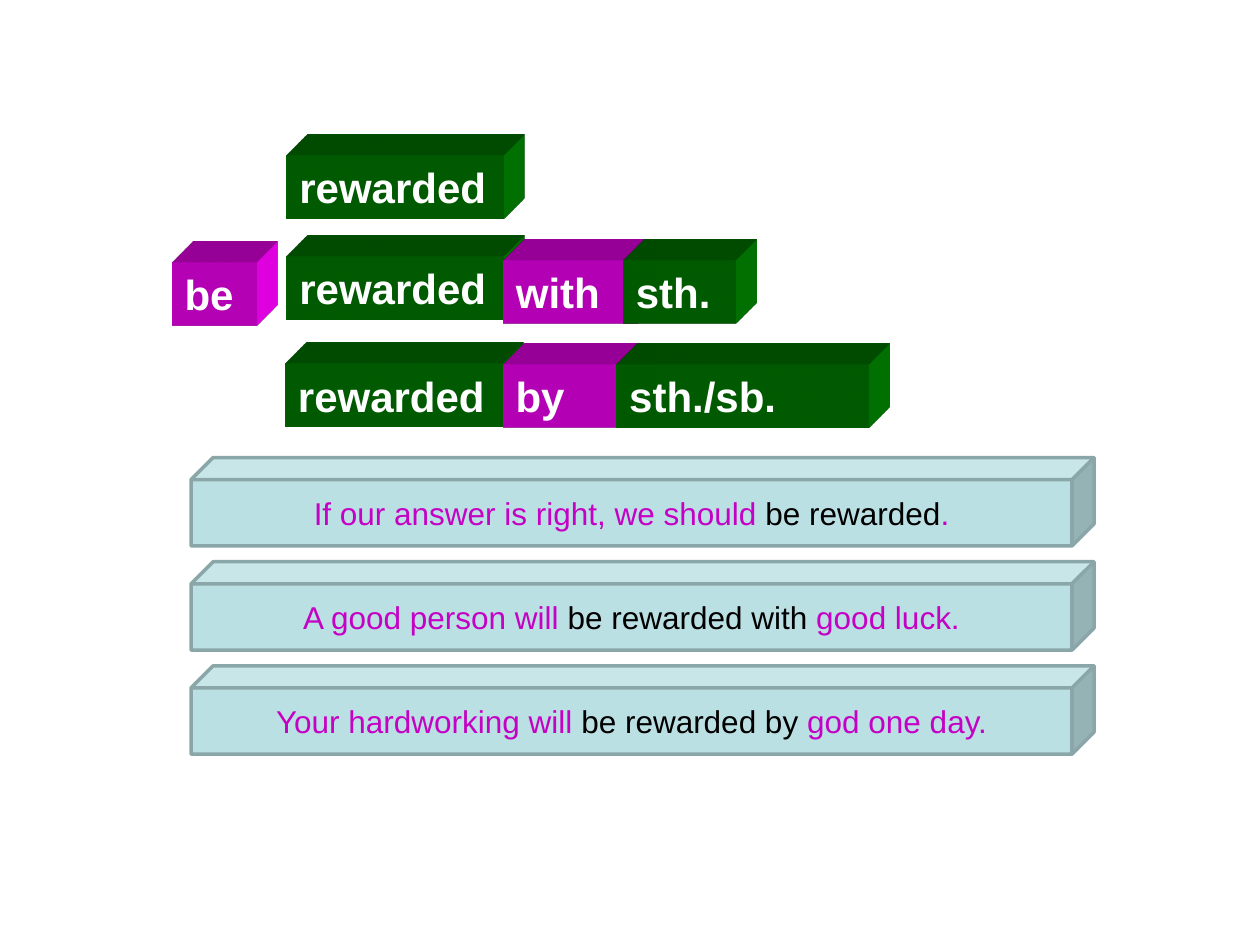
from lxml import etree
from pptx import Presentation
from pptx.dml.color import RGBColor as RGB
from pptx.enum.shapes import MSO_SHAPE as SHAPE
from pptx.enum.text import MSO_ANCHOR as ANCHOR, MSO_AUTO_SIZE as AUTO, PP_ALIGN as ALIGN
from pptx.util import Pt

GREEN, MAGENTA = RGB(0x00, 0x80, 0x00), RGB(0xFF, 0x00, 0xFF)
WHITE, BLACK = RGB(0xFF, 0xFF, 0xFF), RGB(0x00, 0x00, 0x00)
PURPLE, AQUA, SLATE = RGB(0xC4, 0x01, 0xC4), RGB(0xBB, 0xE0, 0xE3), RGB(0x8A, 0xA6, 0xA8)
NS = "http://schemas.openxmlformats.org/drawingml/2006/main"
SCENE = """<a:x xmlns:a="{ns}"><a:scene3d><a:camera prst="legacyObliqueTopRight"/>
<a:lightRig rig="legacyFlat3" dir="b"/></a:scene3d>
<a:sp3d extrusionH="430200" prstMaterial="legacyMatte">
<a:bevelT w="13500" h="13500" prst="angle"/><a:bevelB w="13500" h="13500" prst="angle"/>
<a:extrusionClr><a:srgbClr val="{color}"/></a:extrusionClr></a:sp3d></a:x>"""


class Deck:
    """Builds word blocks and sentence bars on the current slide."""

    def __init__(self):
        self.prs = Presentation()
        self.prs.slide_width, self.prs.slide_height = Pt(720), Pt(540)
        self.s = self.prs.slides.add_slide(self.prs.slide_layouts[6])
        self.word = {"name": "Arial", "size": Pt(24), "bold": True}
        self.sentence = {"name": "Arial", "size": Pt(18), "bold": False}

    def shape(self, kind, box, fill):
        sp = self.s.shapes.add_shape(kind, *map(Pt, box))
        sp.shadow.inherit = False
        sp.fill.solid()
        sp.fill.fore_color.rgb = fill
        sp.text_frame.word_wrap = True
        return sp

    def run(self, p, text, color, style):
        r = p.add_run()
        r.text = text
        for key, value in style.items():
            setattr(r.font, key, value)
        r.font.color.rgb = color

    def block(self, text, left, top, width, fill):
        sp = self.shape(SHAPE.RECTANGLE, (left, top, width, 36), fill)
        sp.line.fill.background()
        scene = SCENE.format(ns=NS, color=fill)
        sp._element.spPr.extend(list(etree.fromstring(scene)))
        tf = sp.text_frame
        tf.auto_size, tf.vertical_anchor = AUTO.SHAPE_TO_FIT_TEXT, ANCHOR.TOP
        p = tf.paragraphs[0]
        p.alignment = ALIGN.LEFT
        self.run(p, text, WHITE, self.word)

    def bar(self, top, parts):
        sp = self.shape(SHAPE.CUBE, (109.2, top, 516, 50.5), AQUA)
        sp.line.color.rgb, sp.line.width = SLATE, Pt(2)
        tf = sp.text_frame
        tf.vertical_anchor = ANCHOR.MIDDLE
        p = tf.paragraphs[0]
        p.alignment = ALIGN.CENTER
        for text, color in zip(parts, (PURPLE, BLACK, PURPLE)):
            self.run(p, text, color, self.sentence)


def main():
    deck = Deck()
    for block in (
        ("rewarded", 164, 146.7, 124, GREEN),
        ("rewarded", 163.2, 208, 124, GREEN),
        ("be", 98.4, 150, 48.5, MAGENTA),
        ("rewarded", 164, 89, 124, GREEN),
        ("with", 287.7, 149, 76.5, MAGENTA),
        ("sth.", 356.3, 149, 64, GREEN),
        ("by", 287.5, 208.3, 76.5, MAGENTA),
        ("sth./sb.", 352.5, 208.3, 144, GREEN),
    ):
        deck.block(*block)
    sentences = (
        ("If our answer is right, we should", " be rewarded", "."),
        ("A good person will ", "be rewarded with", " good luck."),
        ("Your hardworking will ", "be rewarded by", " god one day."),
    )
    for i, parts in enumerate(sentences):
        deck.bar(261.5 + 59.5 * i, parts)
    deck.prs.save("out.pptx")


if __name__ == "__main__":
    main()
